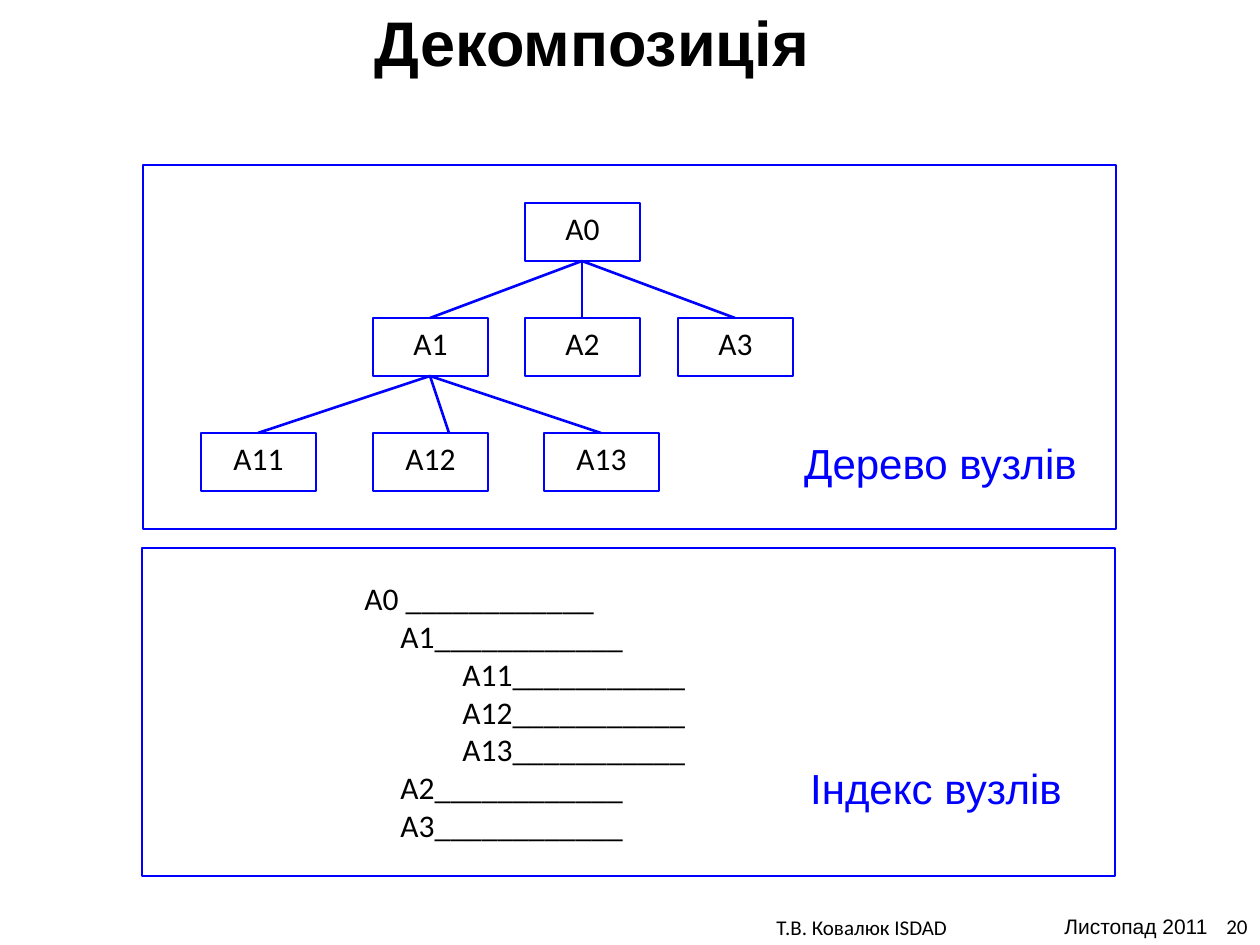
from dataclasses import dataclass

from lxml import etree
from pptx import Presentation
from pptx import util as u
from pptx.dml.color import RGBColor
from pptx.enum import shapes, text
from pptx.oxml import ns

SCALE = 914400 / 126
COLORS = {"ink": "000000", "blue": "0000FF", "white": "FFFFFF"}
ALIGN = text.PP_ALIGN
ANCHOR = text.MSO_ANCHOR
NODE_W, NODE_H = 115, 58
INDENTS = (0, 36, 98)


@dataclass
class Node:
    name: str
    x: int
    y: int
    root: str = ""
    shift: int = 0


@dataclass
class Label:
    words: str
    box: tuple[int, int, int, int]
    size: int = 12
    font: str = "Calibri"
    color: str = "ink"
    align: ALIGN = ALIGN.LEFT
    anchor: ANCHOR = ANCHOR.TOP


@dataclass
class Entry:
    words: str
    level: int


NODES = [
    Node("А0", 525, 203),
    Node("А1", 373, 318, "А0"),
    Node("А2", 525, 318, "А0"),
    Node("А3", 678, 318, "А0"),
    Node("А11", 201, 433, "А1"),
    Node("А12", 373, 433, "А1", 19),
    Node("А13", 544, 433, "А1"),
]
INDEX = [
    Entry("А0 ____________", 0),
    Entry("А1____________", 1),
    Entry("А11___________", 2),
    Entry("А12___________", 2),
    Entry("А13___________", 2),
    Entry("А2____________", 1),
    Entry("А3____________", 1),
]
LABELS = [
    Label("Листопад 2011", (1052, 907, 174, 38), font="Arial"),
    Label("Т.В. Ковалюк ISDAD", (764, 908, 375, 38)),
    Label("Дерево вузлів", (790, 431, 301, 63), 24, "Arial", "blue", ALIGN.CENTER),
    Label("Індекс вузлів", (796, 756, 280, 63), 24, "Arial", "blue", ALIGN.CENTER),
    Label("20", (998, 907, 262, 38), align=ALIGN.RIGHT, anchor=ANCHOR.MIDDLE),
]
FRAMES = [(143, 165, 973, 364), (142, 548, 973, 328)]


def px(n: int) -> u.Emu:
    return u.Emu(round(n * SCALE))


def tint(key: str) -> RGBColor:
    return RGBColor.from_string(COLORS[key])


def write(frame, words: str, *, size: int = 18, font: str = "Calibri",
          color: str = "ink", bold: bool = False, align=ALIGN.LEFT,
          anchor=ANCHOR.TOP, wrap: bool = True) -> None:
    frame.word_wrap = wrap
    frame.auto_size = text.MSO_AUTO_SIZE.NONE
    frame.vertical_anchor = anchor
    frame.text = words
    for para in frame.paragraphs:
        para.alignment = align
        para.font.size = u.Pt(size)
        para.font.name = font
        para.font.bold = bold
        para.font.color.rgb = tint(color)


def draw_box(slide, box: tuple[int, int, int, int], fill: str = ""):
    shape = slide.shapes.add_shape(shapes.MSO_SHAPE.RECTANGLE, *map(px, box))
    shape.shadow.inherit = False
    if fill:
        shape.fill.solid()
        shape.fill.fore_color.rgb = tint(fill)
    else:
        shape.fill.background()
    shape.line.color.rgb = tint("blue")
    shape.line.width = u.Pt(1.5)
    return shape


def draw_node(slide, node: Node) -> None:
    shape = draw_box(slide, (node.x, node.y, NODE_W, NODE_H), "white")
    write(shape.text_frame, node.name, align=ALIGN.CENTER)


def draw_link(slide, top: Node, low: Node) -> None:
    mid = NODE_W // 2
    ends = (top.x + mid, top.y + NODE_H, low.x + mid + low.shift, low.y)
    line = slide.shapes.add_connector(shapes.MSO_CONNECTOR.STRAIGHT, *map(px, ends))
    line.line.color.rgb = tint("blue")
    line.line.width = u.Pt(1.5)
    etree.SubElement(line._element.spPr, ns.qn("a:effectLst"))


def draw_label(slide, label: Label) -> None:
    frame = slide.shapes.add_textbox(*map(px, label.box)).text_frame
    write(frame, label.words, size=label.size, font=label.font, color=label.color,
          align=label.align, anchor=label.anchor)


def draw_index(slide, items: list[Entry]) -> None:
    frame = slide.shapes.add_textbox(*map(px, (352, 573, 360, 277))).text_frame
    write(frame, "\n".join(item.words for item in items), anchor=ANCHOR.MIDDLE)
    for para, item in zip(frame.paragraphs, items):
        props = para._p.get_or_add_pPr()
        props.set("marL", str(px(INDENTS[item.level])))
        props.set("indent", "0")


def main() -> None:
    deck = Presentation()
    deck.slide_width, deck.slide_height = px(1260), px(945)
    slide = deck.slides.add_slide(deck.slide_layouts[5])

    title = slide.shapes.title
    title.left, title.top, title.width, title.height = map(px, (25, 0, 1134, 82))
    write(title.text_frame, "Декомпозиція", size=36, font="Arial", bold=True,
          align=ALIGN.CENTER, anchor=ANCHOR.MIDDLE)

    for box in FRAMES:
        draw_box(slide, box)
    names = {node.name: node for node in NODES}
    for node in NODES:
        draw_node(slide, node)
    for node in NODES:
        if node.root:
            draw_link(slide, names[node.root], node)
    draw_index(slide, INDEX)
    for label in LABELS:
        draw_label(slide, label)
    deck.save("out.pptx")


if __name__ == "__main__":
    main()
